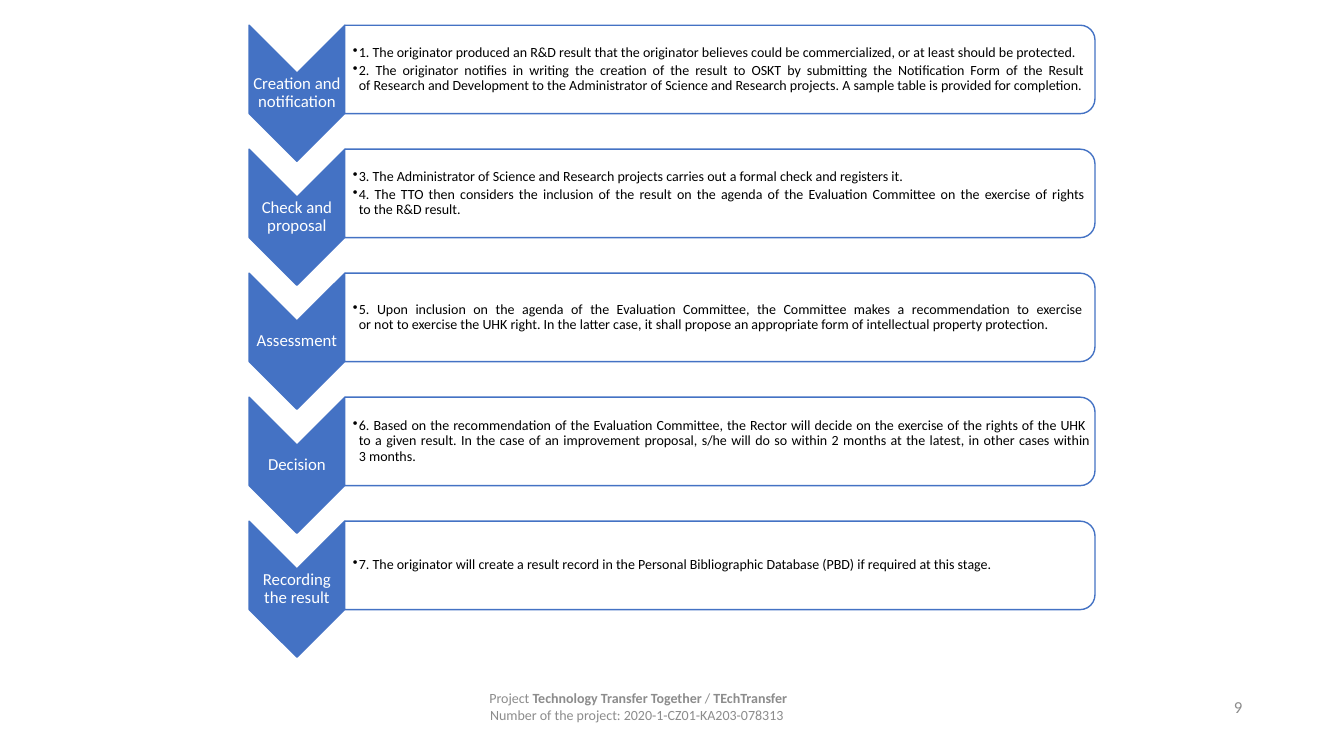
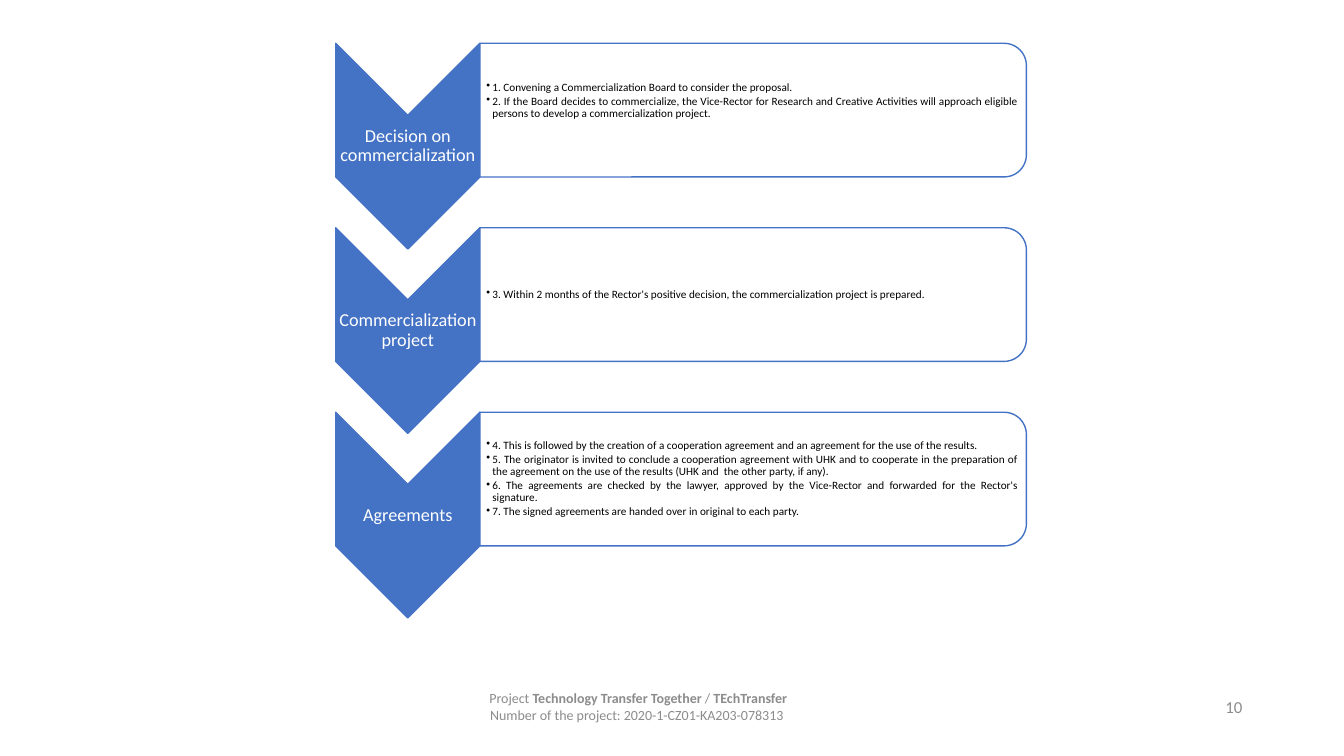
from lxml import etree
from pptx import Presentation
from pptx.dml.color import RGBColor
from pptx.enum.shapes import MSO_SHAPE
from pptx.enum.text import MSO_ANCHOR, PP_ALIGN
from pptx.oxml.ns import qn
from pptx.util import Inches, Pt

CHEVRON = MSO_SHAPE.CHEVRON
CARD = MSO_SHAPE.ROUND_2_SAME_RECTANGLE
MIDDLE = MSO_ANCHOR.MIDDLE
CENTER, RIGHT, JUSTIFY = PP_ALIGN.CENTER, PP_ALIGN.RIGHT, PP_ALIGN.JUSTIFY

BLUE, WHITE, BLACK, GREY = "4472C4", "FFFFFF", "000000", "8C8C8C"
FONT = "Calibri"
BULLET_INDENT = 0.06
CARD_RATIO = 0.65     # card height as a share of chevron height
CORNER_RATIO = 0.05   # text margin inside a card as a share of its height

FOOTER = [
    [("Project ", False), ("Technology Transfer Together", True),
     (" / ", False), ("TEchTransfer", True)],
    [("Number of the project: 2020-1-CZ01-KA203-078313 ", False)],
]

SLIDES = [
    {
        "number": "9",
        "layout": {"left": 2.47, "top": 0.25, "pitch": 1.23, "chevron_w": 0.95,
                   "chevron_h": 1.35, "card_w": 7.44, "label_size": 12, "text_size": 10},
        "steps": [
            ("Creation and notification", [
                "1. The originator produced an R&D result that the originator believes could be "
                "commercialized, or at least should be protected.",
                "2. The originator notifies in writing the creation of the result to OSKT by "
                "submitting the Notification Form of the Result \nof Research and Development to "
                "the Administrator of Science and Research projects. A sample table is provided "
                "for completion."]),
            ("Check and proposal", [
                "3. The Administrator of Science and Research projects carries out a formal check "
                "and registers it.",
                "4. The TTO then considers the inclusion of the result on the agenda of the "
                "Evaluation Committee on the exercise of rights \nto the R&D result."]),
            ("Assessment", [
                "5. Upon inclusion on the agenda of the Evaluation Committee, the Committee makes "
                "a recommendation to exercise \nor not to exercise the UHK right. In the latter "
                "case, it shall propose an appropriate form of intellectual property protection."]),
            ("Decision", [
                "6. Based on the recommendation of the Evaluation Committee, the Rector will decide "
                "on the exercise of the rights of the UHK \nto a given result. In the case of an "
                "improvement proposal, s/he will do so within 2 months at the latest, in other "
                "cases within\n3 months."]),
            ("Recording the result", [
                "7. The originator will create a result record in the Personal Bibliographic "
                "Database (PBD) if required at this stage."]),
        ],
    },
    {
        "number": "10",
        "layout": {"left": 3.33, "top": 0.43, "pitch": 1.83, "chevron_w": 1.43,
                   "chevron_h": 2.04, "card_w": 5.42, "label_size": 13, "text_size": 8},
        "steps": [
            ("Decision on commercialization", [
                "1. Convening a Commercialization Board to consider the proposal.",
                "2. If the Board decides to commercialize, the Vice-Rector for Research and "
                "Creative Activities will approach eligible persons to develop a "
                "commercialization project."], 0.19),
            ("Commercialization project", [
                "3. Within 2 months of the Rector's positive decision, the commercialization "
                "project is prepared."]),
            ("Agreements", [
                "4. This is followed by the creation of a cooperation agreement and an agreement "
                "for the use of the results.",
                "5. The originator is invited to conclude a cooperation agreement with UHK and to "
                "cooperate in the preparation of the agreement on the use of the results "
                "(UHK and  the other party, if any).",
                "6. The agreements are checked by the lawyer, approved by the Vice-Rector and "
                "forwarded for the Rector's signature.",
                "7. The signed agreements are handed over in original to each party."]),
        ],
    },
]


def rgb(value):
    return RGBColor.from_string(value)


def set_all(obj, values):
    for name, value in values.items():
        setattr(obj, name, value)


class Deck:
    """Holds the presentation, its style and the current slide."""

    def __init__(self):
        self.prs = Presentation()
        set_all(self.prs, {"slide_width": Inches(13.33), "slide_height": Inches(7.5)})
        self.s = None

    def add_slide(self, number):
        self.s = self.prs.slides.add_slide(self.prs.slide_layouts[6])
        self.text(11.53, 6.81, 0.89, 0.4, [[(number, False)]], 12, GREY, RIGHT)
        self.text(4.42, 6.81, 3.82, 0.39, FOOTER, 10, GREY, CENTER)

    def text(self, x, y, w, h, paragraphs, size, color, align, insets=None, spacing=None):
        """Add a text box; each paragraph is a list of (text, bold) runs."""
        sp = self.s.shapes.add_textbox(Inches(x), Inches(y), Inches(w), Inches(h))
        tf = sp.text_frame
        set_all(tf, {"word_wrap": True, "vertical_anchor": MIDDLE})
        if insets:
            sides = ("margin_left", "margin_top", "margin_right", "margin_bottom")
            set_all(tf, {side: Inches(v) for side, v in zip(sides, insets)})
        for i, runs in enumerate(paragraphs):
            p = tf.paragraphs[0] if i == 0 else tf.add_paragraph()
            set_all(p, {"alignment": align, "line_spacing": spacing})
            for content, bold in runs:
                for n, line in enumerate(content.split("\n")):
                    if n:
                        p.add_line_break()
                    r = p.add_run()
                    r.text = line
                    set_all(r.font, {"name": FONT, "size": Pt(size), "bold": bold})
                    r.font.color.rgb = rgb(color)
            for br in p._p.findall(qn("a:br")):
                etree.SubElement(br, qn("a:rPr"), sz=str(size * 100))
        return tf

    def bullets(self, x, y, w, h, items, size, insets):
        tf = self.text(x, y, w, h, [[(item, False)] for item in items],
                       size, BLACK, JUSTIFY, insets, 0.9)
        for p in tf.paragraphs:
            p.space_after = Pt(size * 0.18)
            pPr = p._p.get_or_add_pPr()
            pPr.set("marL", str(Inches(BULLET_INDENT)))
            pPr.set("indent", str(-Inches(BULLET_INDENT)))
            etree.SubElement(pPr, qn("a:buChar"), char="•")

    def turned_shape(self, kind, x, y, w, h, fill):
        """Add a shape turned by 90 degrees that covers the given area."""
        sp = self.s.shapes.add_shape(kind, Inches(x + (w - h) / 2), Inches(y + (h - w) / 2),
                                     Inches(h), Inches(w))
        sp.rotation = 90
        sp.shadow.inherit = False
        sp.fill.solid()
        sp.fill.fore_color.rgb = rgb(fill)
        sp.line.color.rgb = rgb(BLUE)
        sp.line.width = Pt(1)

    def step(self, x, y, layout, label, items, lift=0):
        """Add a chevron with its card; lift raises the card text."""
        w, h, card_w = layout["chevron_w"], layout["chevron_h"], layout["card_w"]
        size = layout["text_size"]
        self.turned_shape(CHEVRON, x, y, w, h, BLUE)
        self.text(x, y + w / 2, w, h - w, [[(label, False)]], layout["label_size"],
                  WHITE, CENTER, [0.01] * 4, 0.9)
        card_h = h * CARD_RATIO
        gap = card_h * CORNER_RATIO
        self.turned_shape(CARD, x + w, y, card_w, card_h, WHITE)
        self.bullets(x + w, y + gap, card_w - gap, card_h - 2 * gap, items, size,
                     [size * 0.008, 0.01, 0.01, 0.01 + lift])


def main():
    deck = Deck()
    for content in SLIDES:
        deck.add_slide(content["number"])
        layout = content["layout"]
        for i, step in enumerate(content["steps"]):
            deck.step(layout["left"], layout["top"] + i * layout["pitch"], layout, *step)
    deck.prs.save("out.pptx")


if __name__ == "__main__":
    main()
